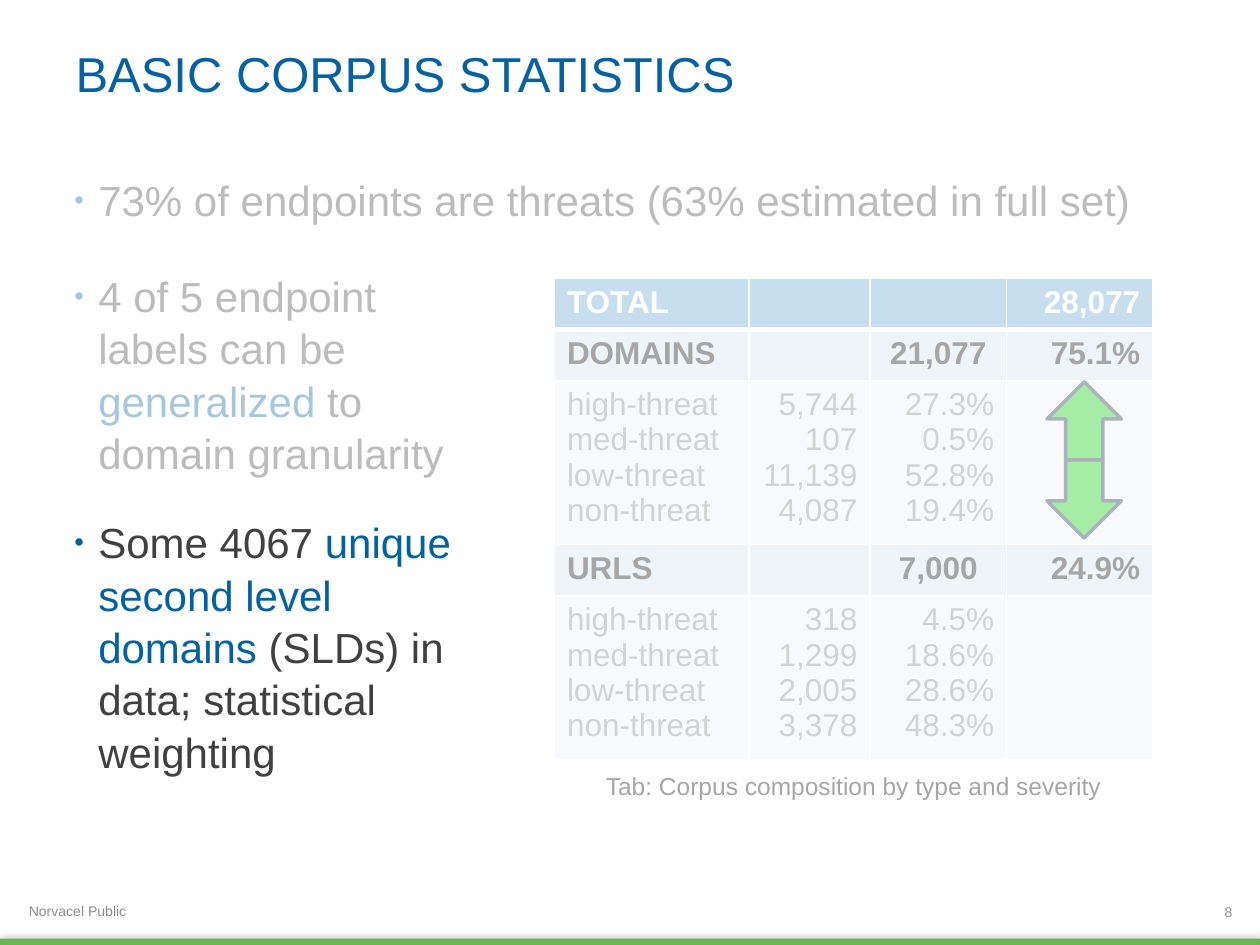
"""Build the corpus statistics slide with its highlighted third point."""
from dataclasses import dataclass
from typing import NamedTuple, Optional

import lxml.etree
import pptx
import pptx.dml.color
import pptx.enum.shapes
import pptx.enum.text
import pptx.oxml.ns
import pptx.util

COLUMNS, ROWS = 100, 75
SLIDE_WIDTH, SLIDE_HEIGHT = pptx.util.Inches(10), pptx.util.Inches(7.5)
FONT = "Arial"
BLUE, DARK, GREY, WHITE, BLACK = "0061A3", "404040", "8C8C8C", "FFFFFF", "000000"
ALIGN = pptx.enum.text.PP_ALIGN
ANCHOR = pptx.enum.text.MSO_ANCHOR
SHAPES = pptx.enum.shapes.MSO_SHAPE
LEFT, CENTER, RIGHT = ALIGN.LEFT, ALIGN.CENTER, ALIGN.RIGHT


class Area(NamedTuple):
    """Left, top, width and height in grid columns and rows."""
    left: float
    top: float
    width: float
    height: float


@dataclass(frozen=True)
class Style:
    """Look of a run of text."""
    size: float
    color: str
    bold: bool = False


@dataclass(frozen=True)
class Block:
    """A preset shape with its fill, opacity, outline and rotation."""
    area: Area
    fill: str
    kind: int = SHAPES.RECTANGLE
    opacity: int = 100
    line: Optional[str] = None
    rotation: int = 0


@dataclass(frozen=True)
class TableRow:
    """Cell texts of a table row with its look."""
    texts: tuple
    height: float
    fill: str
    style: Style
    alignments: tuple
    bottom: float = 1


BODY, ACCENT = Style(24, DARK), Style(24, BLUE)
HEADING, DETAIL = Style(18, BLACK, True), Style(18, "808080")
SEVERITIES = "high-threat\nmed-threat\nlow-threat\nnon-threat"
GROUP_ALIGN, DETAIL_ALIGN = (LEFT, LEFT, CENTER, RIGHT), (LEFT, RIGHT, RIGHT, RIGHT)


def group_row(name: str, count: str, share: str) -> TableRow:
    """Describe the heading row of one endpoint type."""
    return TableRow((name, "", count, share), 4.08, "D2E0EF", HEADING, GROUP_ALIGN)


def detail_row(counts: str, shares: str) -> TableRow:
    """Describe the severity lines of one endpoint type."""
    return TableRow((SEVERITIES, counts, shares, ""), 12.2, "EAF0F7", DETAIL, DETAIL_ALIGN)


TABLE_WIDTHS = (15.45, 9.6, 10.85, 11.6)
TABLE_ROWS = (
    TableRow(("TOTAL", "", "", "28,077"), 4.05, "61A1D4", Style(18, WHITE, True), GROUP_ALIGN, 3),
    group_row("DOMAINS", "21,077", "75.1%"),
    detail_row("5,744\n107\n11,139\n4,087", "27.3%\n0.5%\n52.8%\n19.4%"),
    group_row("URLS", "7,000", "24.9%"),
    detail_row("318\n1,299\n2,005\n3,378", "4.5%\n18.6%\n28.6%\n48.3%"),
)
THREAT_POINTS = ((("73% of endpoints are threats (63% estimated in full set)", BODY),),)
DOMAIN_POINTS = (
    (("4 of 5 endpoint labels can be ", BODY), ("generalized", ACCENT), (" to domain granularity", BODY)),
    (("Some 4067 ", BODY), ("unique second level domains ", ACCENT),
     ("(SLDs) in data; statistical weighting", BODY)),
)
ARROWS = tuple(Block(Area(83.1, top, 5.9, 6.2), "00CC00", SHAPES.DOWN_ARROW, line="0E273E", rotation=turn)
               for top, turn in ((36.5, 0), (30.3, 180)))
VEILS = tuple(Block(area, WHITE, opacity=65) for area in (
    Area(3.7, 10.8, 91.1, 8.8), Area(4.9, 19.2, 33.3, 20.3), Area(43.4, 19.2, 49.6, 47.1)))


def across(columns: float) -> int:
    """Turn grid columns into a length."""
    return round(SLIDE_WIDTH * columns / COLUMNS)


def down(rows: float) -> int:
    """Turn grid rows into a length."""
    return round(SLIDE_HEIGHT * rows / ROWS)


def bounds(area: Area) -> tuple:
    """Turn an area into slide lengths."""
    return across(area.left), down(area.top), across(area.width), down(area.height)


def rgb(color: str):
    """Read a hex colour."""
    return pptx.dml.color.RGBColor.from_string(color)


def add_element(parent, tag: str, **attributes: str):
    """Append a drawing element to a parent."""
    return lxml.etree.SubElement(parent, pptx.oxml.ns.qn(tag), attributes)


def add_run(paragraph, text: str, style: Style) -> None:
    """Add a formatted run."""
    run = paragraph.add_run()
    run.text = text
    run.font.name, run.font.size, run.font.bold = FONT, pptx.util.Pt(style.size), style.bold
    run.font.color.rgb = rgb(style.color)


def place(shape, area: Area) -> None:
    """Move a placeholder to an area."""
    shape.left, shape.top, shape.width, shape.height = bounds(area)
    shape.text_frame.auto_size = pptx.enum.text.MSO_AUTO_SIZE.NONE


def fill_list(shape, area: Area, points: tuple) -> None:
    """Write bulleted points into a placeholder."""
    place(shape, area)
    frame = shape.text_frame
    for index, runs in enumerate(points):
        paragraph = frame.add_paragraph() if index else frame.paragraphs[0]
        properties = paragraph._p.get_or_add_pPr()
        indent = pptx.util.Inches(0.19)
        properties.set("marL", str(indent))
        properties.set("indent", str(-indent))
        add_element(add_element(properties, "a:buClr"), "a:srgbClr", val=BLUE)
        add_element(properties, "a:buSzPct", val="65000")
        add_element(properties, "a:buFont", typeface=FONT)
        add_element(properties, "a:buChar", char="•")
        paragraph.line_spacing = 1.04
        paragraph.space_before = pptx.util.Pt(21 if index else 0)
        for text, style in runs:
            add_run(paragraph, text, style)


def add_label(slide, area: Area, text: str, style: Style, alignment=LEFT, anchor=ANCHOR.MIDDLE) -> None:
    """Add a one-line text box."""
    frame = slide.shapes.add_textbox(*bounds(area)).text_frame
    frame.word_wrap, frame.vertical_anchor = True, anchor
    frame.paragraphs[0].alignment = alignment
    add_run(frame.paragraphs[0], text, style)


def add_block(slide, block: Block):
    """Add a preset shape without shadow."""
    shape = slide.shapes.add_shape(block.kind, *bounds(block.area))
    shape.shadow.inherit = False
    shape.rotation = block.rotation
    shape.fill.solid()
    shape.fill.fore_color.rgb = rgb(block.fill)
    if block.opacity < 100:
        color = shape._element.spPr.find(".//" + pptx.oxml.ns.qn("a:srgbClr"))
        add_element(color, "a:alpha", val=str(block.opacity * 1000))
    if block.line:
        shape.line.color.rgb = rgb(block.line)
        shape.line.width = pptx.util.Pt(2)
    else:
        shape.line.fill.background()
    return shape


def add_footer_bar(slide) -> None:
    """Add the green bar with its soft shadow."""
    shape = add_block(slide, Block(Area(0, 74.5, 100, 0.5), "69B453"))
    effects = shape._element.spPr.find(pptx.oxml.ns.qn("a:effectLst"))
    shadow = add_element(effects, "a:outerShdw", blurRad=str(pptx.util.Pt(5)), dist="0", dir="0")
    add_element(add_element(shadow, "a:srgbClr", val=BLACK), "a:alpha", val="40000")


def fill_cell(cell, text: str, alignment, row: TableRow, top: float) -> None:
    """Write and format one table cell."""
    properties = cell._tc.get_or_add_tcPr()
    for side, width in (("L", 1), ("R", 1), ("T", top), ("B", row.bottom)):
        line = add_element(properties, f"a:ln{side}", w=str(pptx.util.Pt(width)))
        add_element(add_element(line, "a:solidFill"), "a:srgbClr", val=WHITE)
    cell.fill.solid()
    cell.fill.fore_color.rgb = rgb(row.fill)
    paragraph = cell.text_frame.paragraphs[0]
    paragraph.alignment = alignment
    for index, line_text in enumerate(text.split("\n") if text else ()):
        if index:
            paragraph.add_line_break()
        add_run(paragraph, line_text, row.style)
    for line_break in paragraph._p.findall(pptx.oxml.ns.qn("a:br")):
        add_element(line_break, "a:rPr", sz=str(row.style.size * 100))


def add_corpus_table(slide) -> None:
    """Add the table of endpoints by type and severity."""
    area = Area(44, 22.1, sum(TABLE_WIDTHS), sum(row.height for row in TABLE_ROWS))
    table = slide.shapes.add_table(len(TABLE_ROWS), len(TABLE_WIDTHS), *bounds(area)).table
    table.horz_banding = False
    for column, width in zip(table.columns, TABLE_WIDTHS):
        column.width = across(width)
    top = 1
    for table_row, row in zip(table.rows, TABLE_ROWS):
        table_row.height = down(row.height)
        for cell, text, alignment in zip(table_row.cells, row.texts, row.alignments):
            fill_cell(cell, text, alignment, row, top)
        top = row.bottom


def main() -> None:
    """Build and save the slide."""
    presentation = pptx.Presentation()
    presentation.slide_width, presentation.slide_height = SLIDE_WIDTH, SLIDE_HEIGHT
    slide = presentation.slides.add_slide(presentation.slide_layouts[3])
    title, domains, threats = slide.placeholders
    add_footer_bar(slide)
    add_label(slide, Area(1.3, 71.3, 33.2, 2), "Norvacel Public", Style(8, GREY))
    place(title, Area(5, 2.7, 90, 6.1))
    title.text_frame.vertical_anchor = ANCHOR.MIDDLE
    title.text_frame.paragraphs[0].alignment = LEFT
    add_run(title.text_frame.paragraphs[0], "BASIC CORPUS STATISTICS", Style(28, "0661A3"))
    fill_list(domains, Area(4.9, 20.8, 33.3, 48), DOMAIN_POINTS)
    add_label(slide, Area(94.9, 71.5, 3.9, 1.7), "8", Style(8, GREY), RIGHT)
    add_corpus_table(slide)
    add_label(slide, Area(44, 60.7, 47.5, 3.4), "Tab: Corpus composition by type and severity",
              Style(14, BLACK), CENTER, ANCHOR.TOP)
    fill_list(threats, Area(4.9, 13.2, 88.1, 8.1), THREAT_POINTS)
    for block in ARROWS + VEILS:
        add_block(slide, block)
    presentation.save("out.pptx")


if __name__ == "__main__":
    main()
